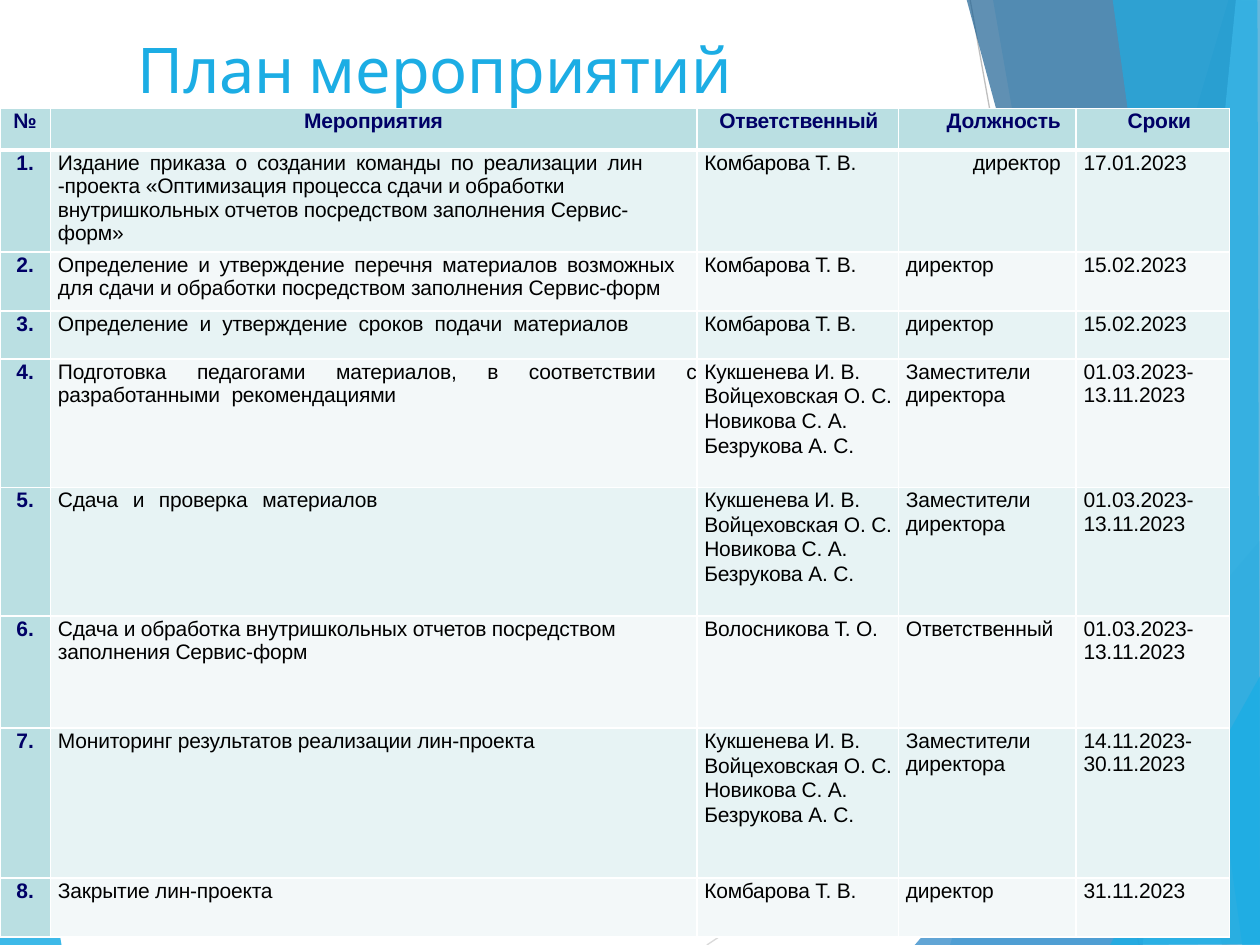
from lxml.etree import SubElement
from pptx import Presentation
from pptx.dml.color import RGBColor
from pptx.enum.shapes import MSO_CONNECTOR
from pptx.enum.text import MSO_AUTO_SIZE, PP_ALIGN
from pptx.oxml.ns import qn
from pptx.util import Inches, Pt

BLUE, NAVY, BLACK, WHITE = "1CADE4", "000066", "000000", "FFFFFF"
HEADER_FILL, ODD_FILL, EVEN_FILL = "BADFE2", "E7F3F4", "F3F8F9"
CENTER, RIGHT, JUSTIFY = PP_ALIGN.CENTER, PP_ALIGN.RIGHT, PP_ALIGN.JUSTIFY

# Fill colour, opacity in percent, corner points in inches
FACETS_BEHIND = [
    (BLUE, 85, [(-0.01, 4.39), (0.49, 7.51), (-0.01, 7.5)]),
]
FACETS_FRONT = [
    (BLUE, 30, [(9.75, 0), (7.54, 7.5), (10.02, 7.51), (10.01, 0.01)]),
    (BLUE, 20, [(7.88, -0.01), (9.19, 7.5), (10.01, 7.5), (10.01, -0.01)]),
    ("2683C6", 72, [(7.26, 7.5), (10, 4.29), (10.01, 7.5)]),
    ("1D6294", 70, [(7.67, -0.01), (9.7, 7.5), (10.01, 7.49), (10.01, -0.01)]),
    ("77CEEF", 70, [(9.81, -0.01), (9.07, 7.5), (10.01, 7.5), (10, -0.01)]),
    (BLUE, 65, [(8.83, -0.01), (9.86, 7.5), (10, 7.5), (9.98, -0.01)]),
    (BLUE, 80, [(8.81, 7.5), (10.01, 5.35), (10.01, 7.49)]),
]

COLUMN_WIDTHS = [0.4, 5.13, 1.6, 1.41, 1.22]
ROW_HEIGHTS = [0.33, 0.63, 0.47, 0.38, 1.02, 1.02, 0.89, 1.19, 0.47]
HEADINGS = [
    ("№", {"align": CENTER}),
    ("Мероприятия", {"align": CENTER}),
    ("Ответственный", {"indent": 0.18, "spacing": -0.2}),
    ("Должность", {"align": RIGHT}),
    ("Сроки", {"indent": 0.41}),
]
HEAD = "Комбарова Т. В."
DEPUTIES = "Кукшенева И. В.\nВойцеховская О. С.\nНовикова С. А.\nБезрукова А. С."
DEPUTY_POST = "Заместители директора"
SPRING = "01.03.2023-13.11.2023"
# Activity as (text, extra points per space), person, post, dates
ACTIVITIES = [
    ([("Издание приказа о создании команды по реализации лин ", 2.4),
      ("-проекта «Оптимизация процесса сдачи и обработки внутришкольных отчетов "
       "посредством заполнения Сервис-форм»", 0)], HEAD, "директор", "17.01.2023"),
    ([("Определение и утверждение перечня материалов возможных ", 2.2),
      ("для сдачи и обработки посредством заполнения Сервис-форм", 0)],
     HEAD, "директор", "15.02.2023"),
    ([("Определение и утверждение сроков подачи материалов", 3)],
     HEAD, "директор", "15.02.2023"),
    ([("Подготовка педагогами материалов, в соответствии с разработанными "
       "рекомендациями", 3.2)], DEPUTIES, DEPUTY_POST, SPRING),
    ([("Сдача и проверка материалов", 5)], DEPUTIES, DEPUTY_POST, SPRING),
    ([("Сдача и обработка внутришкольных отчетов посредством заполнения Сервис-форм", 0)],
     "Волосникова Т. О.", "Ответственный", SPRING),
    ([("Мониторинг результатов реализации лин-проекта", 0)],
     DEPUTIES, DEPUTY_POST, "14.11.2023-30.11.2023"),
    ([("Закрытие лин-проекта", 0)], HEAD, "директор", "31.11.2023"),
]


def color(value):
    return RGBColor.from_string(value)


def add_run(paragraph, text, size, font, ink, bold, spacing):
    run = paragraph.add_run()
    run.text = text
    run.font.size, run.font.name, run.font.bold = Pt(size), font, bold
    run.font.color.rgb = color(ink)
    run.font._element.set("spc", str(round(spacing * 100)))


def write(frame, content, size=12, font="Arial", ink=BLACK, bold=False,
          align=None, indent=0, before=0.6, spacing=-0.1):
    """Fill a frame with a string, or with (text, extra points per space) pairs."""
    segments = [(content, 0)] if isinstance(content, str) else content
    paragraph = None
    for text, gap in segments:
        for line in text.split("\n"):
            if paragraph is None:
                paragraph = frame.paragraphs[0]
            elif "\n" in text:
                paragraph = frame.add_paragraph()
            paragraph.alignment = align
            paragraph.space_before = Pt(before)
            properties = paragraph._p.get_or_add_pPr()
            properties.set("marL", str(Inches(indent)))
            properties.set("indent", "0")
            pieces = line.replace(" ", "\t \t").split("\t") if gap else [line]
            for piece in filter(None, pieces):
                extra = gap if piece == " " else 0
                add_run(paragraph, piece, size, font, ink, bold, spacing + extra)


def set_border(cell, side, width):
    line = SubElement(cell._tc.get_or_add_tcPr(), qn(f"a:ln{side}"), w=str(Pt(width)))
    fill = SubElement(line, qn("a:solidFill"))
    SubElement(fill, qn("a:srgbClr"), val=WHITE)


class SlideBuilder:
    def __init__(self, slide):
        self.slide = slide

    def facet(self, fill, opacity, points):
        corners = [(Inches(x), Inches(y)) for x, y in points]
        builder = self.slide.shapes.build_freeform(*corners[0])
        builder.add_line_segments(corners[1:], close=True)
        shape = builder.convert_to_shape()
        shape.shadow.inherit = False
        shape.fill.solid()
        shape.fill.fore_color.rgb = color(fill)
        shape.line.fill.background()
        tint = shape._element.spPr.find(f"{qn('a:solidFill')}/{qn('a:srgbClr')}")
        SubElement(tint, qn("a:alpha"), val=str(opacity * 1000))

    def line(self, start, end, ink):
        points = [Inches(value) for value in (*start, *end)]
        connector = self.slide.shapes.add_connector(MSO_CONNECTOR.STRAIGHT, *points)
        connector.line.color.rgb = color(ink)
        connector.line.width = Pt(0.75)
        SubElement(connector._element.spPr, qn("a:effectLst"))

    def title(self, text, left, top, width, height):
        box = self.slide.shapes.add_textbox(*map(Inches, (left, top, width, height)))
        frame = box.text_frame
        frame.word_wrap = True
        frame.auto_size = MSO_AUTO_SIZE.SHAPE_TO_FIT_TEXT
        frame.margin_left = frame.margin_right = frame.margin_bottom = 0
        frame.margin_top = Inches(0.01)
        write(frame, text, size=36, font="Karla", ink=BLUE, indent=0.01, before=0.9)

    def table(self, left, top):
        size = sum(COLUMN_WIDTHS), sum(ROW_HEIGHTS)
        table = self.slide.shapes.add_table(
            len(ROW_HEIGHTS), len(COLUMN_WIDTHS), *map(Inches, (left, top, *size))).table
        table.first_row = table.horz_banding = False
        for column, width in zip(table.columns, COLUMN_WIDTHS):
            column.width = Inches(width)
        for row, height in zip(table.rows, ROW_HEIGHTS):
            row.height = Inches(height)
        for index, (text, style) in enumerate(HEADINGS):
            self.cell(table, 0, index, text, HEADER_FILL, ink=NAVY, bold=True, **style)
        for number, activity in enumerate(ACTIVITIES, 1):
            fill = ODD_FILL if number % 2 else EVEN_FILL
            self.cell(table, number, 0, f"{number}.", HEADER_FILL,
                      ink=NAVY, bold=True, align=CENTER, spacing=0)
            for index, content in enumerate(activity, 1):
                align = {(1, 3): RIGHT, (4, 1): JUSTIFY}.get((number, index))
                self.cell(table, number, index, content, fill, align=align,
                          indent=0 if align == RIGHT else 0.06)

    def cell(self, table, row, column, content, fill, **style):
        cell = table.cell(row, column)
        cell.margin_left = cell.margin_right = cell.margin_bottom = 0
        cell.margin_top = Inches(0.01)
        if style.get("align") == RIGHT:
            cell.margin_right = Inches(0.12)
        elif (row, column) == (1, 1):
            cell.margin_right = Inches(0.25)
        for side in "LRTB":
            under_header = (row, side) in ((0, "B"), (1, "T"))
            set_border(cell, side, 3 if under_header else 1)
        cell.fill.solid()
        cell.fill.fore_color.rgb = color(fill)
        write(cell.text_frame, content, **style)


def main():
    presentation = Presentation()
    presentation.slide_width, presentation.slide_height = Inches(10), Inches(7.5)
    builder = SlideBuilder(presentation.slides.add_slide(presentation.slide_layouts[6]))
    for facet in FACETS_BEHIND:
        builder.facet(*facet)
    builder.line((5.61, 7.5), (10.01, 4.57), "D9D9D9")
    builder.line((7.7, 0), (9.04, 7.5), "BFBFBF")
    for facet in FACETS_FRONT:
        builder.facet(*facet)
    builder.title("План мероприятий", 1.08, 0.23, 5.82, 0.62)
    builder.table(0, 0.86)
    presentation.save("out.pptx")


if __name__ == "__main__":
    main()
